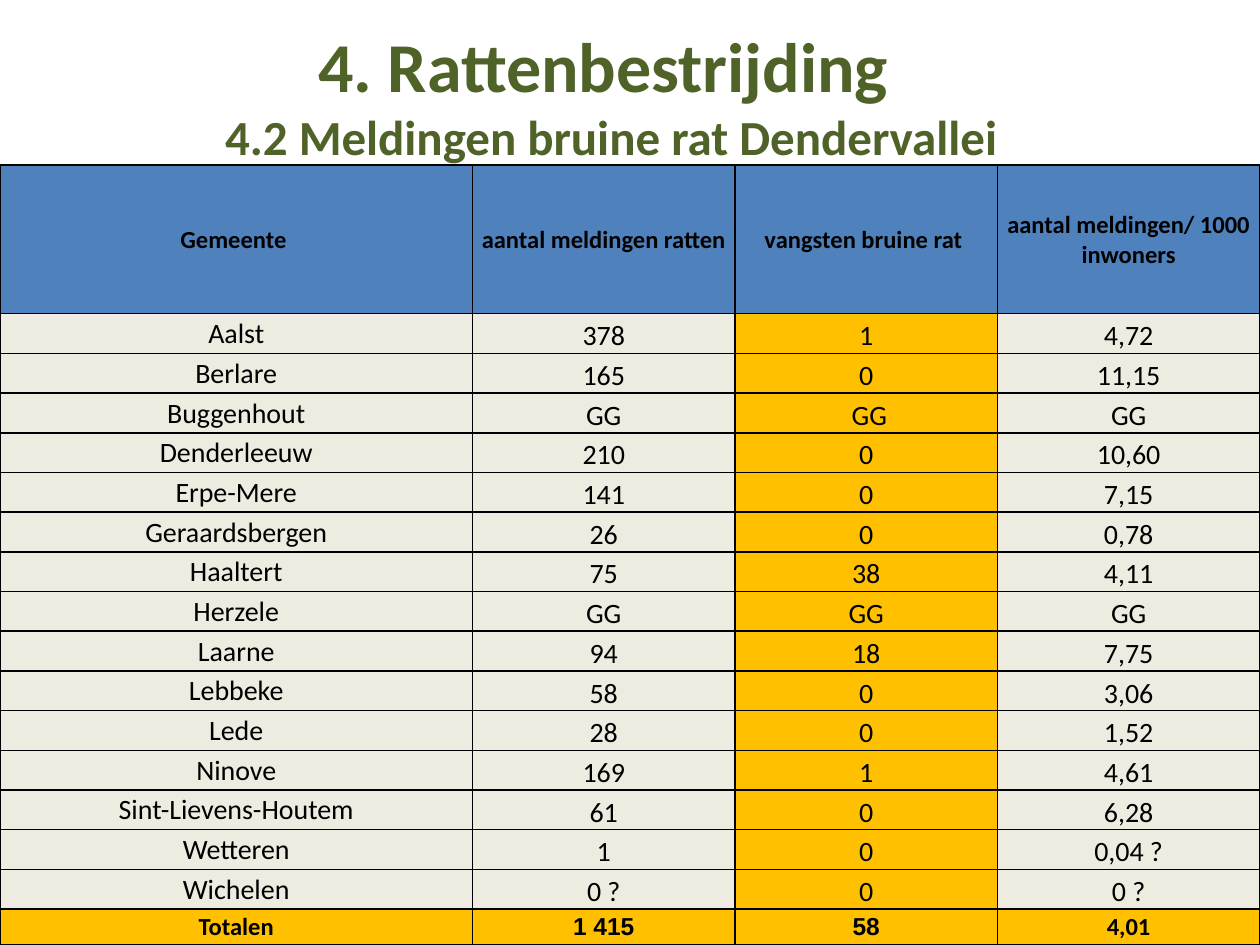
"""Build the slide with brown rat reports per town in the Dender valley."""
from lxml.etree import SubElement as Sub
from pptx import Presentation
from pptx.dml.color import RGBColor as Rgb
from pptx.enum.text import MSO_ANCHOR as Anchor, MSO_AUTO_SIZE as Fit, PP_ALIGN as Align
from pptx.oxml.ns import qn
from pptx.util import Inches, Pt

TITLE = [("4. Rattenbestrijding ", 40), ("4.2 Meldingen bruine rat Dendervallei", 28)]
HEAD = ("Gemeente ", "aantal meldingen ratten", "vangsten bruine rat ",
        "aantal meldingen/ 1000 inwoners")
TOWNS = [
    ("Aalst", "378", "1", "4,72"),
    ("Berlare", "165", "0", "11,15"),
    ("Buggenhout", "GG", " GG", "GG"),
    ("Denderleeuw", "210", "0", "10,60"),
    ("Erpe-Mere", "141", "0", "7,15"),
    ("Geraardsbergen", "26", "0", "0,78"),
    ("Haaltert", "75", "38", "4,11"),
    ("Herzele", "GG", "GG", "GG"),
    ("Laarne", "94", "18", "7,75"),
    ("Lebbeke", "58", "0", "3,06"),
    ("Lede", "28", "0", "1,52"),
    ("Ninove", "169", "1", "4,61"),
    ("Sint-Lievens-Houtem", "61", "0", "6,28"),
    ("Wetteren", "1", "0", "0,04 ?"),
    ("Wichelen", "0 ?", "0", "0 ?"),
]
TOTAL = ("Totalen", "1 415", "58", "4,01")
ROWS = [HEAD, *TOWNS, TOTAL]
COLOR = {"title": "4F6228", "text": "000000", "head": "4F81BD",
         "plain": "EEECE1", "gold": "FFC000", "line": "000000"}
WIDE, HIGH = 10, 7.5
TOP, HEAD_H, TOTAL_H = 1.31, 1.18, 0.28
TOWN_H = (HIGH - TOP - HEAD_H - TOTAL_H) / len(TOWNS)
SHARES = (18, 10, 10, 10)
INSET = {"margin_left": 0.01, "margin_top": 0.01, "margin_right": 0.01, "margin_bottom": 0}


def style(para, size, color, bold=True, face="Calibri"):
    """Centre a paragraph and set its font."""
    para.alignment = Align.CENTER
    for key, val in {"size": Pt(size), "bold": bold, "name": face}.items():
        setattr(para.font, key, val)
    para.font.color.rgb = Rgb.from_string(COLOR[color])


def border(cell):
    """Draw a thin line on all four sides of a cell."""
    props = cell._tc.get_or_add_tcPr()
    for spot, side in enumerate(("lnL", "lnR", "lnT", "lnB")):
        line = Sub(props, qn(f"a:{side}"), w=str(Pt(1)))
        Sub(Sub(line, qn("a:solidFill")), qn("a:srgbClr"), val=COLOR["line"])
        props.insert(spot, line)


def add_title(slide):
    """Fill and place the two-line title."""
    title = slide.shapes.title
    title.left, title.top, title.width, title.height = map(Inches, (0.35, 0.13, 9, 5.42))
    frame = title.text_frame
    frame.text = "\n".join(text for text, _ in TITLE)
    frame.auto_size, frame.vertical_anchor = Fit.NONE, Anchor.TOP
    for para, (_, size) in zip(frame.paragraphs, TITLE):
        style(para, size, "title")


def fill_cell(cell, text, row, col):
    """Write one cell in the look of its row and column."""
    head, total = row == 0, row == len(ROWS) - 1
    edge = head or total
    cell.text = text
    for key, val in INSET.items():
        setattr(cell, key, Inches(val))
    cell.vertical_anchor = Anchor.MIDDLE if edge or col == 0 else Anchor.BOTTOM
    kind = "head" if head else "gold" if total or col == 2 else "plain"
    cell.fill.solid()
    cell.fill.fore_color.rgb = Rgb.from_string(COLOR[kind])
    face = "Arial" if total and col in (1, 2) else "Calibri"
    style(cell.text_frame.paragraphs[0], 14 if edge else 16, "text", edge, face)
    border(cell)


def add_table(slide):
    """Add the table of towns."""
    table = slide.shapes.add_table(len(ROWS), len(HEAD), 0, Inches(TOP),
                                   Inches(WIDE), Inches(HIGH - TOP)).table
    for col, share in zip(table.columns, SHARES):
        col.width = Inches(WIDE * share / sum(SHARES))
    heights = [HEAD_H, *[TOWN_H] * len(TOWNS), TOTAL_H]
    for line, high in zip(table.rows, heights):
        line.height = Inches(high)
    for row, texts in enumerate(ROWS):
        for col, text in enumerate(texts):
            fill_cell(table.cell(row, col), text, row, col)


def main():
    """Make and save the deck."""
    deck = Presentation()
    deck.slide_width, deck.slide_height = Inches(WIDE), Inches(HIGH)
    slide = deck.slides.add_slide(deck.slide_layouts[5])
    add_title(slide)
    add_table(slide)
    deck.save("out.pptx")


if __name__ == "__main__":
    main()
